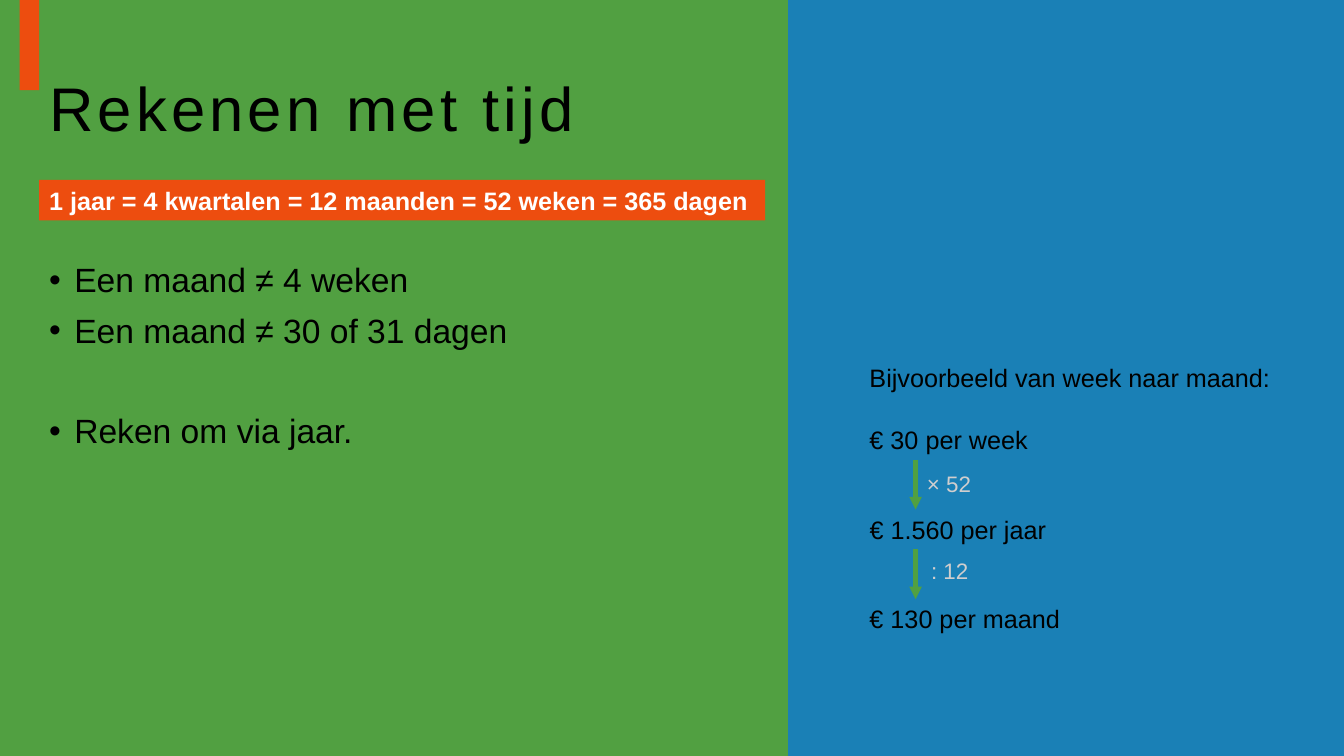
"""Builds the slide "Rekenen met tijd" about converting amounts between periods."""
from lxml import etree
from pptx import Presentation
from pptx.dml.color import RGBColor
from pptx.enum.shapes import MSO_CONNECTOR as CONNECTOR, MSO_SHAPE as SHAPE
from pptx.enum.text import MSO_ANCHOR as ANCHOR, PP_ALIGN as ALIGN
from pptx.oxml.ns import qn
from pptx.util import Pt

COLORS = {"green": "51A041", "blue": "1A80B6", "orange": "ED4D0F",
          "black": "000000", "white": "FFFFFF", "gray": "D0CECE"}


def add_block(left, top, width, height, color):
    block = slide.shapes.add_shape(SHAPE.RECTANGLE, Pt(left), Pt(top), Pt(width), Pt(height))
    block.shadow.inherit = False
    block.fill.solid()
    block.fill.fore_color.rgb = RGBColor.from_string(COLORS[color])
    block.line.fill.background()
    return block


def write(shape, lines, size, color="black", bold=False, anchor=ANCHOR.TOP):
    frame = shape.text_frame
    frame.word_wrap = True
    frame.vertical_anchor = anchor
    frame.text = "\n".join(lines)
    for paragraph in frame.paragraphs:
        paragraph.alignment = ALIGN.LEFT
        font = paragraph.runs[0].font
        for key, value in {"name": "Arial", "size": Pt(size), "bold": bold}.items():
            setattr(font, key, value)
        font.color.rgb = RGBColor.from_string(COLORS[color])
    return frame.paragraphs


deck = Presentation()
deck.slide_width, deck.slide_height = Pt(960), Pt(540)
slide = deck.slides.add_slide(deck.slide_layouts[6])

add_block(0, 0, 563, 540, "green")
add_block(563, 0, 397, 540, "blue")
add_block(14, 0, 14, 64.5, "orange")

title = slide.shapes.add_textbox(Pt(28), Pt(28), Pt(908), Pt(104))
heading = write(title, ["Rekenen met tijd"], 44, anchor=ANCHOR.MIDDLE)[0]
heading.line_spacing = 0.9
heading.runs[0].font._element.set("spc", "300")

rules = slide.shapes.add_textbox(Pt(28), Pt(185), Pt(518), Pt(300))
rule_lines = ["Een maand ≠ 4 weken", "Een maand ≠ 30 of 31 dagen", "Reken om via jaar."]
for rule, gap in zip(write(rules, rule_lines, 24), (10, 10, 46)):
    rule.line_spacing = 0.9
    rule.space_before = Pt(gap)
    properties = rule._p.get_or_add_pPr()
    properties.set("marL", str(Pt(18)))
    properties.set("indent", str(-Pt(18)))
    etree.SubElement(properties, qn("a:buFont")).set("typeface", "Arial")
    etree.SubElement(properties, qn("a:buChar")).set("char", "•")

year = add_block(28, 128.5, 518.5, 29, "orange")
write(year, ["1 jaar = 4 kwartalen = 12 maanden = 52 weken = 365 dagen"], 18,
      "white", True, ANCHOR.MIDDLE)

example_left, first_amount, step = 614, 299.5, 64
example = slide.shapes.add_textbox(Pt(example_left), Pt(255), Pt(304), Pt(29))
write(example, ["Bijvoorbeeld van week naar maand:"], 18)

amounts = [("€ 30 per week", 130), ("€ 1.560 per jaar", 142), ("€ 130 per maand", 153)]
for i, (amount, width) in enumerate(amounts):
    box = slide.shapes.add_textbox(Pt(example_left), Pt(first_amount + i * step), Pt(width), Pt(29))
    write(box, [amount], 18)

factors = [("× 52", 655, 332.5, 48), (": 12", 658, 394.5, 43)]
for i, (factor, left, top, width) in enumerate(factors):
    start = first_amount + 29 + i * step
    arrow = slide.shapes.add_connector(CONNECTOR.STRAIGHT, Pt(654), Pt(start),
                                       Pt(654), Pt(start + 35.5))
    arrow.line.width = Pt(3)
    arrow.line.color.rgb = RGBColor.from_string(COLORS["green"])
    etree.SubElement(arrow.line._get_or_add_ln(), qn("a:tailEnd")).set("type", "triangle")
    etree.SubElement(arrow._element.spPr, qn("a:effectLst"))
    label = slide.shapes.add_textbox(Pt(left), Pt(top), Pt(width), Pt(26.5))
    write(label, [factor], 16, "gray")

deck.save("out.pptx")
